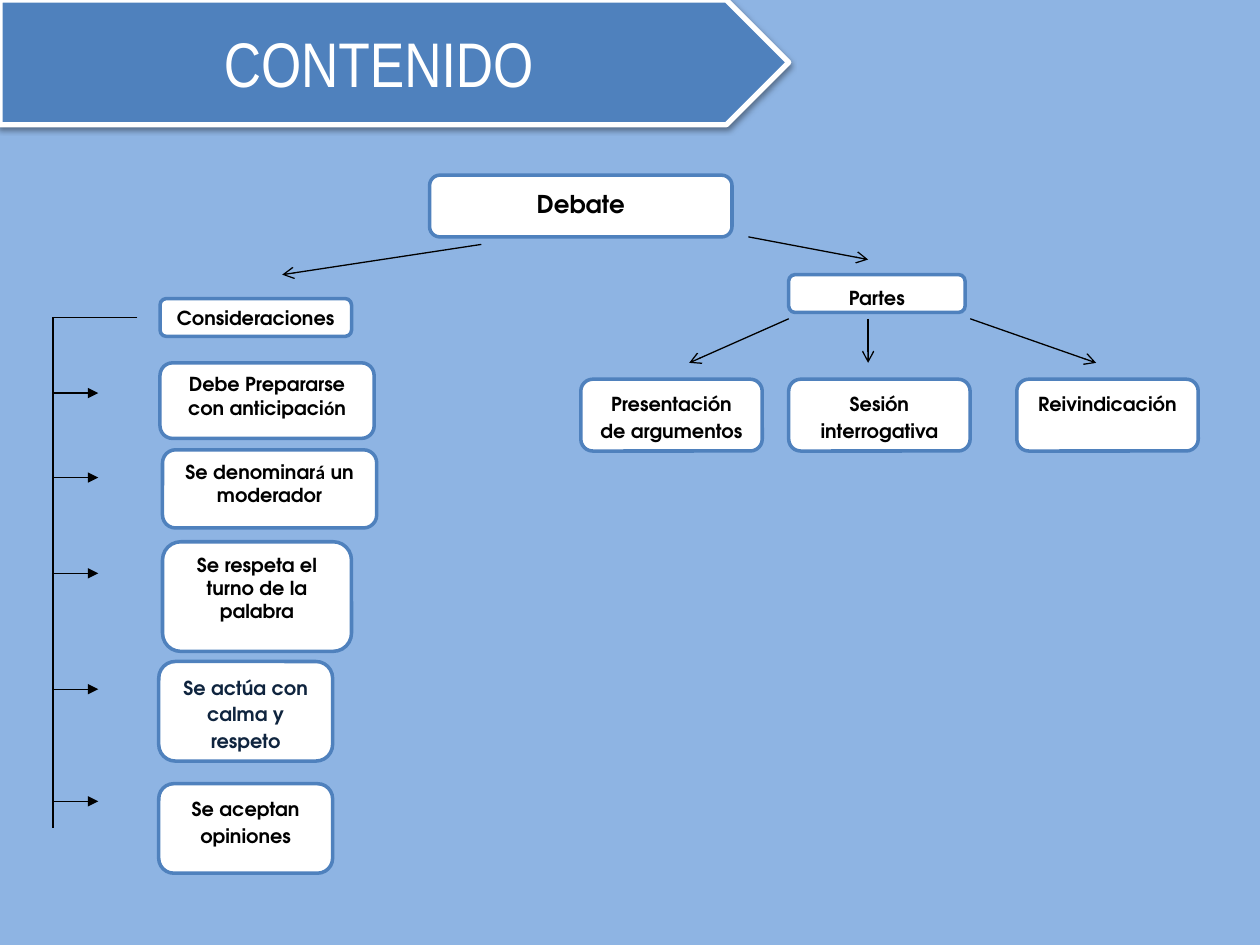
from dataclasses import dataclass

from lxml import etree
from pptx import Presentation
from pptx import util as u
from pptx.dml.color import RGBColor
from pptx.enum import shapes, text
from pptx.oxml import parse_xml
from pptx.oxml.ns import nsdecls, qn


@dataclass(frozen=True)
class Theme:
    background: str = "8EB4E3"
    accent: str = "4F81BD"
    white: str = "FFFFFF"
    ink: str = "000000"
    navy: str = "0F243E"
    title_font: str = "Arial Narrow"
    body_font: str = "TeX Gyre Adventor"
    accent_font: str = "Calibri"
    title_size: int = 36
    topic_size: int = 14
    body_size: int = 11
    banner_line: float = 3
    box_line: float = 2
    arrow_line: float = 0.75


class DebateMap:
    def __init__(self, slide, theme):
        self.slide = slide
        self.theme = theme
        background = slide.background.fill
        background.solid()
        background.fore_color.rgb = RGBColor.from_string(theme.background)

    def _shape(self, preset, place, fill, line, width):
        shape = self.slide.shapes.add_shape(preset, *map(u.Inches, place))
        shape.shadow.inherit = False
        shape.fill.solid()
        shape.fill.fore_color.rgb = RGBColor.from_string(fill)
        shape.line.color.rgb = RGBColor.from_string(line)
        shape.line.width = u.Pt(width)
        shape.text_frame.word_wrap = True
        return shape

    def _format(self, run, font, size, color, bold):
        run.font.name = font
        run.font.size = u.Pt(size)
        run.font.color.rgb = RGBColor.from_string(color)
        run.font.bold = bold

    def banner(self, title, place):
        t = self.theme
        shape = self._shape(shapes.MSO_SHAPE.PENTAGON, place,
                            t.accent, t.white, t.banner_line)
        effects = shape._element.spPr.find(qn("a:effectLst"))
        effects.append(parse_xml(
            f'<a:outerShdw {nsdecls("a")} blurRad="{u.Pt(3.1)}" '
            f'dist="{u.Pt(1.6)}" dir="5400000" rotWithShape="0">'
            '<a:srgbClr val="000000"><a:alpha val="38000"/></a:srgbClr>'
            '</a:outerShdw>'))
        frame = shape.text_frame
        frame.text = title
        frame.vertical_anchor = text.MSO_ANCHOR.MIDDLE
        paragraph = frame.paragraphs[0]
        paragraph.alignment = text.PP_ALIGN.CENTER
        self._format(paragraph.runs[0], t.title_font, t.title_size,
                     t.white, False)

    def box(self, label, place, size=None, color=None, spaced=True,
            accented=None):
        """Draw a rounded box; the accented letter takes the accent font."""
        t = self.theme
        shape = self._shape(shapes.MSO_SHAPE.ROUNDED_RECTANGLE, place,
                            t.white, t.accent, t.box_line)
        frame = shape.text_frame
        frame.vertical_anchor = text.MSO_ANCHOR.TOP
        paragraph = frame.paragraphs[0]
        paragraph.alignment = text.PP_ALIGN.CENTER
        if spaced:
            paragraph.line_spacing = 1.15
            paragraph.space_after = u.Pt(10)
        pieces = label.partition(accented) if accented else [label]
        for piece in pieces:
            run = paragraph.add_run()
            run.text = piece
            font = t.accent_font if piece == accented else t.body_font
            self._format(run, font, size or t.body_size, color or t.ink, True)

    def line(self, start, end, head=None):
        connector = self.slide.shapes.add_connector(
            shapes.MSO_CONNECTOR.STRAIGHT, *map(u.Inches, (*start, *end)))
        connector.line.color.rgb = RGBColor.from_string(self.theme.ink)
        connector.line.width = u.Pt(self.theme.arrow_line)
        if head:
            etree.SubElement(connector.line._get_or_add_ln(),
                             qn("a:tailEnd"), type=head)
        etree.SubElement(connector._element.spPr, qn("a:effectLst"))


def main():
    theme = Theme()
    prs = Presentation()
    prs.slide_width, prs.slide_height = u.Inches(10), u.Inches(7.5)
    debate = DebateMap(prs.slides.add_slide(prs.slide_layouts[6]), theme)

    debate.banner("CONTENIDO", (0, 0, 6.26, 0.99))
    debate.box("Debate", (3.41, 1.39, 2.4, 0.49), size=theme.topic_size)

    # Considerations, with a bracket and one arrow for each
    debate.box("Consideraciones", (1.27, 2.37, 1.52, 0.3), spaced=False)
    debate.box("Debe Prepararse con anticipación", (1.27, 2.88, 1.7, 0.6),
               spaced=False, accented="ó")
    debate.box("Se denominará un moderador", (1.29, 3.57, 1.7, 0.62),
               spaced=False, accented="á")
    debate.box("Se respeta el turno de la palabra", (1.29, 4.3, 1.5, 0.87),
               spaced=False)
    debate.box("Se actúa con calma y respeto", (1.26, 5.25, 1.38, 0.79),
               color=theme.navy)
    debate.box("Se aceptan opiniones", (1.26, 6.22, 1.38, 0.71))

    bracket_x, bracket_top = 0.42, 2.52
    debate.line((1.09, bracket_top), (bracket_x, bracket_top))
    debate.line((bracket_x, bracket_top), (bracket_x, 6.57))
    for y in (3.12, 3.79, 4.55, 5.47, 6.36):
        debate.line((bracket_x, y), (0.78, y), "triangle")

    # Parts, each with its arrow from the heading
    debate.box("Partes", (6.26, 2.18, 1.4, 0.3))
    parts = [
        ("Presentación de argumentos", 4.61, 6.26, 5.47),
        ("Sesión interrogativa", 6.26, 6.89, 6.89),
        ("Reivindicación", 8.07, 7.7, 8.7),
    ]
    for part, left, start_x, end_x in parts:
        debate.box(part, (left, 3.01, 1.44, 0.57))
        debate.line((start_x, 2.53), (end_x, 2.88), "arrow")

    debate.line((3.82, 1.94), (2.24, 2.18), "arrow")
    debate.line((5.94, 1.88), (6.89, 2.06), "arrow")

    prs.save("out.pptx")


if __name__ == "__main__":
    main()
